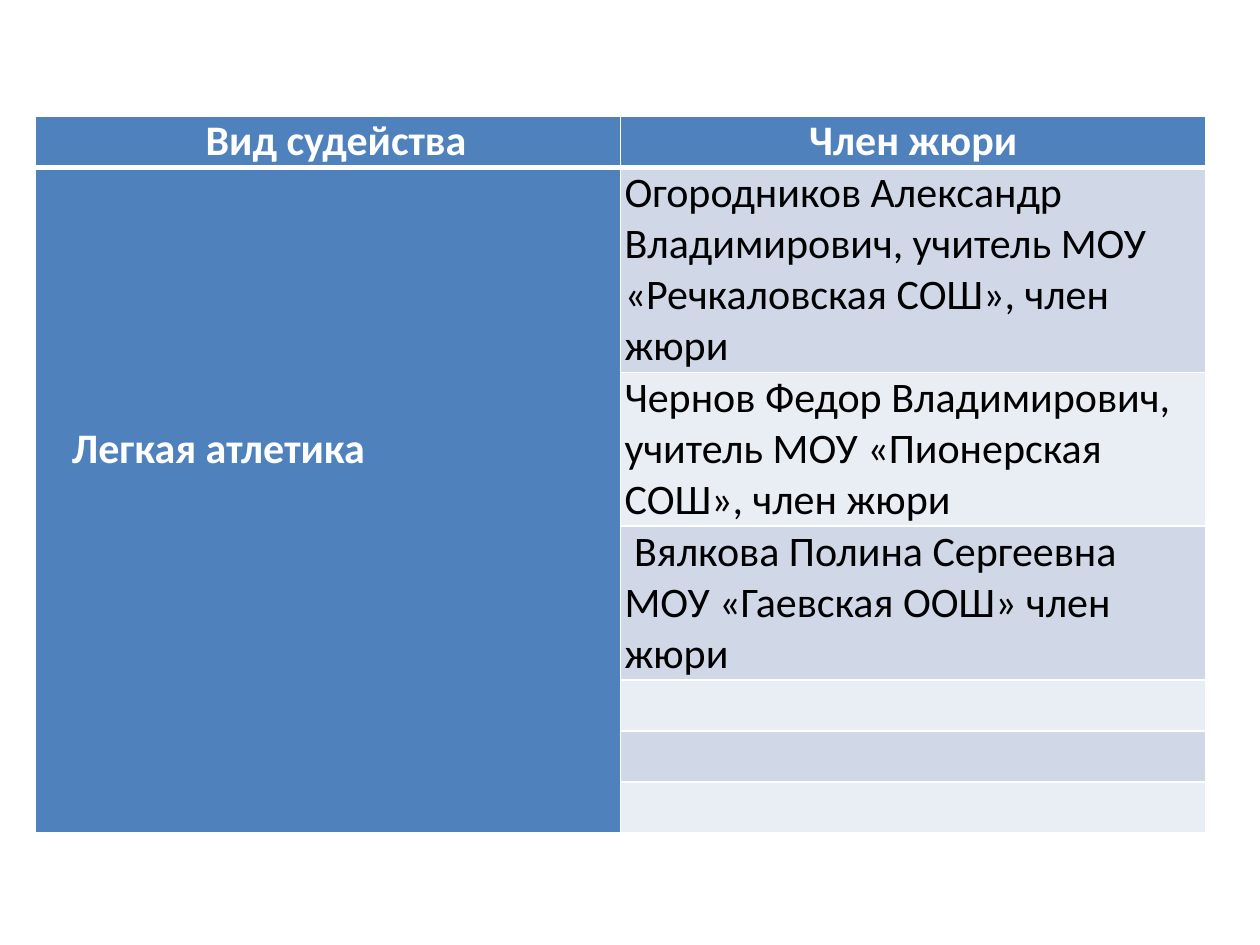
from pptx import Presentation
from pptx.dml.color import RGBColor
from pptx.enum.text import MSO_ANCHOR as Anchor, PP_ALIGN as Align
from pptx.oxml import parse_xml
from pptx.oxml.ns import nsdecls
from pptx.util import Cm, Pt

BLUE, WHITE, BLACK = "4F81BD", "FFFFFF", "000000"
BANDS = ("D0D8E8", "E9EDF4")
LINE_HEIGHT = 1.03
COLUMN_WIDTH = 11.8
JURY = [
    ("Огородников Александр Владимирович, учитель МОУ «Речкаловская СОШ», член жюри", 4),
    ("Чернов Федор Владимирович, учитель МОУ «Пионерская СОШ», член жюри", 3),
    (" Вялкова Полина Сергеевна МОУ «Гаевская ООШ» член жюри", 3),
    ("", 1),
    ("", 1),
    ("", 1),
]


def color(code):
    """Turn a hex string into a colour."""
    return RGBColor.from_string(code)


def add_borders(cell, bottom=1):
    """Draw white borders around a cell, with the bottom width in points."""
    properties = cell._tc.get_or_add_tcPr()
    widths = {"lnL": 1, "lnR": 1, "lnT": 1, "lnB": bottom}
    for index, (side, width) in enumerate(widths.items()):
        border = parse_xml(
            f'<a:{side} {nsdecls("a")} w="{Pt(width)}"><a:solidFill>'
            f'<a:srgbClr val="{WHITE}"/></a:solidFill></a:{side}>')
        properties.insert(index, border)


def fill_cell(cell, text, fill, ink=BLACK, bold=False, align=Align.LEFT,
              margin=0.08, indent=0, bottom=1):
    """Write and format one table cell."""
    cell.fill.solid()
    cell.fill.fore_color.rgb = color(fill)
    cell.margin_left = cell.margin_right = Cm(margin)
    cell.margin_top = cell.margin_bottom = 0
    cell.text_frame.text = text
    paragraph = cell.text_frame.paragraphs[0]
    paragraph.alignment = align
    paragraph._p.get_or_add_pPr().set("marL", str(Cm(indent)))
    for run in paragraph.runs:
        run.font.name = "Calibri"
        run.font.size = Pt(24)
        run.font.bold = bold
        run.font.color.rgb = color(ink)
    add_borders(cell, bottom)


def add_jury_table(slide):
    """Add the table of judged sports and jury members."""
    line_counts = [1] + [lines for _, lines in JURY]
    table = slide.shapes.add_table(
        len(line_counts), 2, Cm(0.71), Cm(2.34),
        Cm(2 * COLUMN_WIDTH), Cm(LINE_HEIGHT * sum(line_counts))).table
    for column in table.columns:
        column.width = Cm(COLUMN_WIDTH)
    for row, lines in zip(table.rows, line_counts):
        row.height = Cm(LINE_HEIGHT * lines)

    heading = dict(fill=BLUE, ink=WHITE, bold=True)
    fill_cell(table.cell(0, 0), "Вид судейства", align=Align.CENTER,
              margin=0, indent=0.33, bottom=3, **heading)
    fill_cell(table.cell(0, 1), "Член жюри", align=Align.CENTER, bottom=3, **heading)

    sport = table.cell(1, 0)
    sport.merge(table.cell(len(JURY), 0))
    fill_cell(sport, "Легкая атлетика", margin=0, indent=0.74, **heading)
    sport.vertical_anchor = Anchor.MIDDLE
    sport.margin_bottom = Cm(2.06)

    for index, (member, _) in enumerate(JURY):
        fill_cell(table.cell(index + 1, 1), member, BANDS[index % 2])


def main():
    """Build and save the slide."""
    deck = Presentation()
    deck.slide_width, deck.slide_height = Cm(25.4), Cm(19.05)
    slide = deck.slides.add_slide(deck.slide_layouts[6])
    add_jury_table(slide)
    deck.save("out.pptx")


if __name__ == "__main__":
    main()
